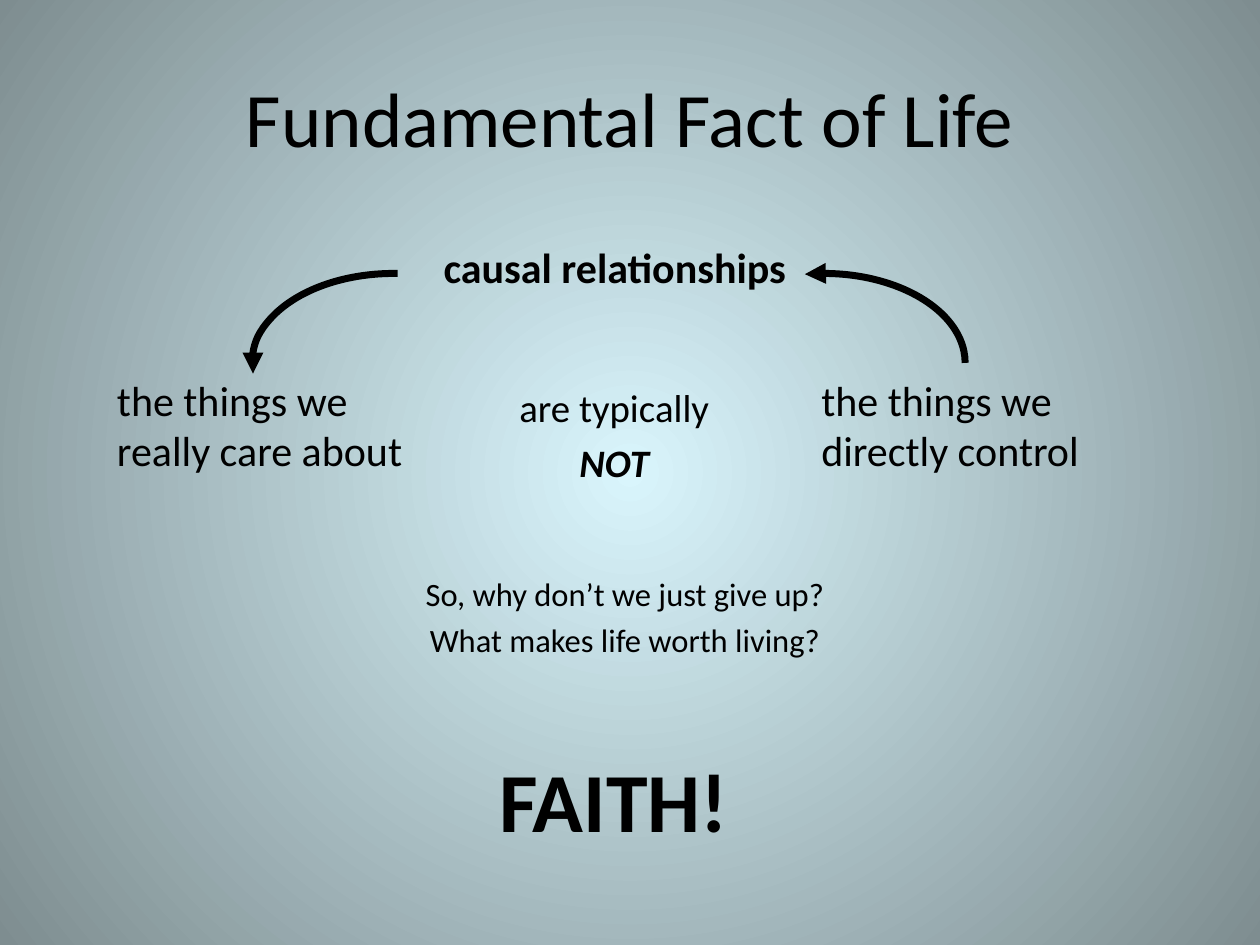
from pptx import Presentation
from pptx.dml.color import RGBColor
from pptx.enum.shapes import MSO_SHAPE as Shape
from pptx.enum.text import MSO_ANCHOR as Anchor, PP_ALIGN as Align
from pptx.oxml import parse_xml
from pptx.oxml.ns import nsdecls, qn
from pptx.util import Inches, Pt

BLACK = "000000"
BACKGROUND = ["D9F5FC", "7E8D90"]  # centre, edge

# lines, (left, top, width, height), format
TEXTS = [
    (["Fundamental Fact of Life"], (0.5, 0.3, 9, 1.25),
     dict(size=44, anchor=Anchor.MIDDLE, gap=0)),
    (["causal relationships"], (2.67, 1.67, 4.42, 0.7),
     dict(size=24, anchor=Anchor.BOTTOM, bold=[0])),
    (["the things we really care about"], (0.83, 2.92, 2.75, 1),
     dict(size=24, align=Align.LEFT)),
    (["FAITH!"], (2.66, 5.92, 4.42, 0.87),
     dict(size=48, anchor=Anchor.BOTTOM, bold=[0])),
    (["the things we directly control"], (6.42, 2.92, 2.67, 1.08),
     dict(size=24, align=Align.LEFT)),
    (["are typically", "NOT"], (3.5, 3, 2.75, 0.83),
     dict(size=22.2, bold=[1], italic=[1])),
    (["So, why don’t we just give up?", "What makes life worth living?"],
     (2.75, 4.58, 4.42, 0.7), dict(size=18.6, anchor=Anchor.BOTTOM)),
]

# left edge, (start, end) adjustments
ARCS = [(5.41, (154.94, 0)), (2, (105.4, 163.52))]
ARC_TOP, ARC_WIDTH, ARC_HEIGHT = 2.17, 2.25, 1.42


def color(hex_code):
    return RGBColor.from_string(hex_code)


def paint_background(page):
    """Radial gradient spreading from the middle of the page."""
    fill = page.background.fill
    fill.gradient()
    for stop, position, hex_code in zip(fill.gradient_stops, (0, 1), BACKGROUND):
        stop.position = position
        stop.color.rgb = color(hex_code)
    gradient = next(page.element.iter(qn("a:gradFill")))
    gradient.replace(gradient.find(qn("a:lin")), parse_xml(
        f'<a:path {nsdecls("a")} path="circle">'
        '<a:fillToRect l="50000" t="50000" r="50000" b="50000"/></a:path>'))


def add_text(page, lines, place, size, align=Align.CENTER, anchor=Anchor.TOP,
             bold=(), italic=(), gap=0.2):
    """bold and italic list line numbers; gap is a share of the text size."""
    box = page.shapes.add_textbox(*map(Inches, place))
    frame = box.text_frame
    frame.word_wrap = True
    frame.vertical_anchor = anchor
    for number, line in enumerate(lines):
        para = frame.add_paragraph() if number else frame.paragraphs[0]
        para.alignment = align
        para.space_before = Pt(size * gap)
        span = para.add_run()
        span.text = line
        font = span.font
        font.name, font.size = "Calibri", Pt(size)
        font.bold, font.italic = number in bold, number in italic
        font.color.rgb = color(BLACK)


def add_arc_arrow(page, left, angles):
    arc = page.shapes.add_shape(
        Shape.ARC, *map(Inches, (left, ARC_TOP, ARC_WIDTH, ARC_HEIGHT)))
    arc.shadow.inherit = False
    arc.fill.background()
    arc.adjustments[0], arc.adjustments[1] = angles
    arc.line.color.rgb = color(BLACK)
    arc.line.width = Pt(4)
    outline = next(arc.element.iter(qn("a:ln")))
    outline.append(parse_xml(f'<a:headEnd {nsdecls("a")} type="triangle"/>'))


deck = Presentation()
deck.slide_width, deck.slide_height = Inches(10), Inches(7.5)
page = deck.slides.add_slide(deck.slide_layouts[6])
paint_background(page)
for lines, place, style in TEXTS:
    add_text(page, lines, place, **style)
for left, angles in ARCS:
    add_arc_arrow(page, left, angles)
deck.save("out.pptx")
